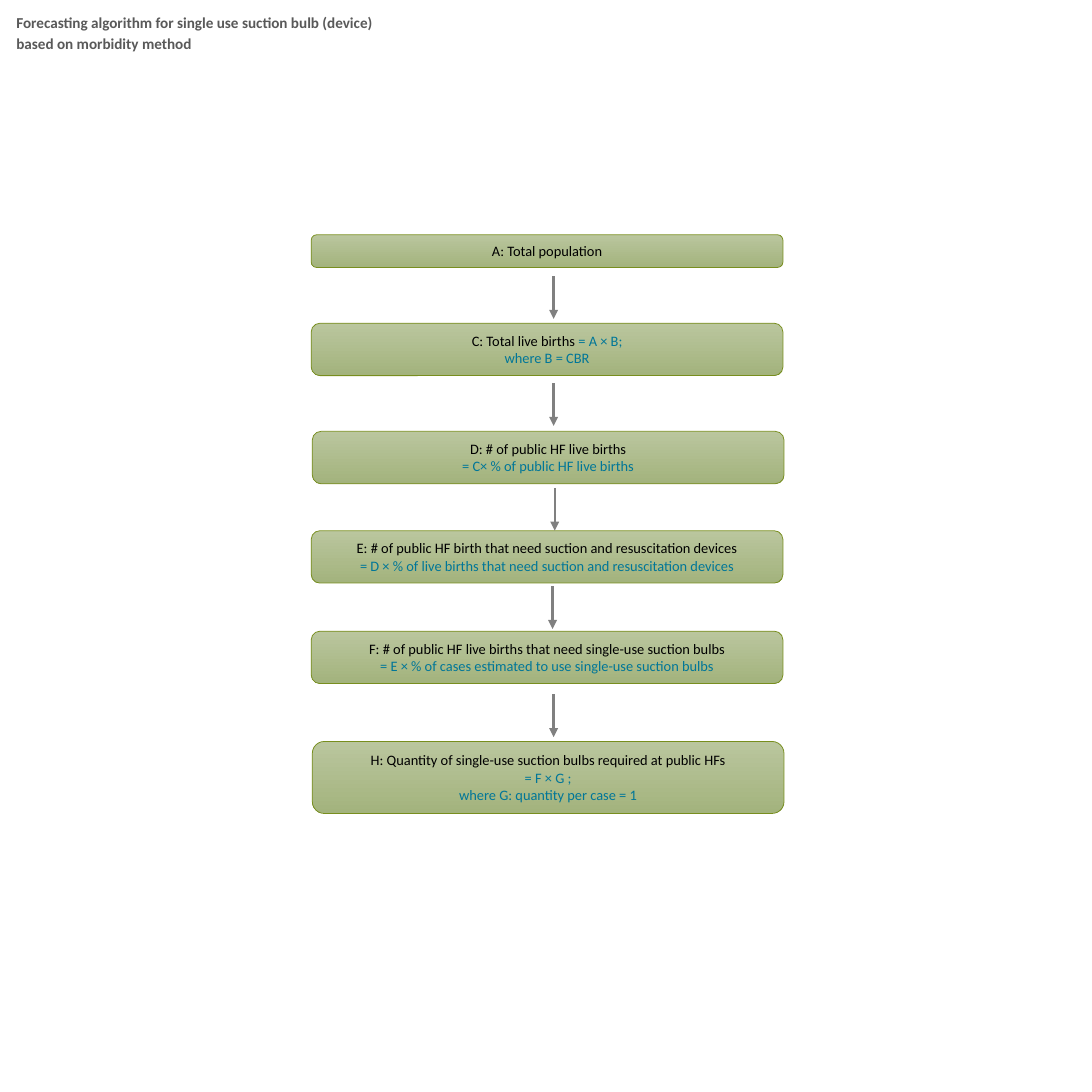
import pptx
import pptx.dml.color
import pptx.enum.shapes
import pptx.enum.text
import pptx.oxml
import pptx.oxml.ns
import pptx.util

Inches = pptx.util.Inches
Pt = pptx.util.Pt
RGBColor = pptx.dml.color.RGBColor
Align = pptx.enum.text.PP_ALIGN
Anchor = pptx.enum.text.MSO_ANCHOR

BLACK = RGBColor(0x00, 0x00, 0x00)
FORMULA_BLUE = RGBColor(0x00, 0x76, 0x98)
HEADING_GRAY = RGBColor(0x59, 0x59, 0x59)
ARROW_GRAY = RGBColor(0x80, 0x80, 0x80)
LIGHT_GREEN = RGBColor(0xBA, 0xC6, 0x9E)
DARK_GREEN = RGBColor(0xA3, 0xB3, 0x7D)
BORDER_GREEN = RGBColor(0x78, 0x8E, 0x1E)

HEADING = "Forecasting algorithm for single use suction bulb (device) based on morbidity method"
STEP_WIDTH = 4.32
ARROW_LENGTH = 0.39

STEPS = [
    (2.85, 2.15, 0.3, [[("A: Total population", BLACK)]]),
    (2.85, 2.96, 0.48, [
        [("C: Total live births ", BLACK), ("= A × B;", FORMULA_BLUE)],
        [("where B = CBR", FORMULA_BLUE)]]),
    (2.86, 3.95, 0.48, [
        [("D: # of public HF live births", BLACK)],
        [("= C× % of public HF live births", FORMULA_BLUE)]]),
    (2.85, 4.86, 0.48, [
        [("E: # of public HF birth that need suction and resuscitation devices", BLACK)],
        [("= D × % of live births that need suction and resuscitation devices", FORMULA_BLUE)]]),
    (2.85, 5.78, 0.48, [
        [("F: # of public HF live births that need single-use suction bulbs", BLACK)],
        [("= E × % of cases estimated to use single-use suction bulbs", FORMULA_BLUE)]]),
    (2.86, 6.79, 0.66, [
        [("H: Quantity of single-use suction bulbs required at public HFs", BLACK)],
        [("= F × G ;", FORMULA_BLUE)],
        [("where G: quantity per case = 1", FORMULA_BLUE)]]),
]
ARROWS = [(5.07, 2.53), (5.07, 3.51), (5.08, 4.47), (5.06, 5.37), (5.07, 6.36)]


def write(frame, lines, size, align, anchor, bold=False, spacing=None, inset=None):
    """Fill a text frame with lines made of (text, colour) runs."""
    frame.word_wrap = True
    frame.auto_size = pptx.enum.text.MSO_AUTO_SIZE.NONE
    frame.vertical_anchor = anchor
    if inset is not None:
        frame.margin_left = frame.margin_right = Inches(inset)
        frame.margin_top = frame.margin_bottom = Inches(inset)
    for number, line in enumerate(lines):
        paragraph = frame.add_paragraph() if number else frame.paragraphs[0]
        paragraph.alignment = align
        paragraph.space_before = Pt(0)
        if spacing:
            paragraph.line_spacing = spacing
        for text, color in line:
            run = paragraph.add_run()
            run.text = text
            run.font.name = "Calibri"
            run.font.size = Pt(size)
            run.font.bold = bold
            run.font.color.rgb = color


class FlowSlide:
    """Hold the flowchart style and the current slide."""

    def __init__(self, deck):
        """Add a title-only slide to the deck."""
        self.slide = deck.slides.add_slide(deck.slide_layouts[5])

    def heading(self, text):
        """Place the slide title at the top left."""
        title = self.slide.shapes.title
        title.left, title.top = Inches(0.05), Inches(0.05)
        title.width, title.height = Inches(3.49), Inches(0.47)
        write(title.text_frame, [[(text, HEADING_GRAY)]], size=10,
              align=Align.LEFT, anchor=Anchor.TOP, bold=True, spacing=1.15)

    def step(self, left, top, height, lines):
        """Draw one rounded green step."""
        step = self.slide.shapes.add_shape(
            pptx.enum.shapes.MSO_SHAPE.ROUNDED_RECTANGLE,
            Inches(left), Inches(top), Inches(STEP_WIDTH), Inches(height))
        step.shadow.inherit = False
        step.fill.gradient()
        step.fill.gradient_angle = 270
        for stop, color, position in zip(
                step.fill.gradient_stops, (LIGHT_GREEN, DARK_GREEN), (0, 1)):
            stop.color.rgb = color
            stop.position = position
        step.line.color.rgb = BORDER_GREEN
        step.line.width = Pt(0.5)
        write(step.text_frame, lines, size=9.5, align=Align.CENTER,
              anchor=Anchor.MIDDLE, inset=0.05)

    def arrow(self, x, top):
        """Draw one downward arrow."""
        arrow = self.slide.shapes.add_connector(
            pptx.enum.shapes.MSO_CONNECTOR.STRAIGHT,
            Inches(x), Inches(top), Inches(x), Inches(top + ARROW_LENGTH))
        arrow.line.color.rgb = ARROW_GRAY
        arrow.line.width = Pt(1.5)
        namespace = pptx.oxml.ns.nsdecls("a")
        arrow.line._get_or_add_ln().append(
            pptx.oxml.parse_xml(f'<a:tailEnd {namespace} type="triangle"/>'))
        arrow._element.spPr.append(pptx.oxml.parse_xml(f"<a:effectLst {namespace}/>"))


def main():
    """Build and save the forecasting flowchart."""
    deck = pptx.Presentation()
    deck.slide_width = deck.slide_height = Inches(10)
    flow = FlowSlide(deck)
    flow.heading(HEADING)
    for left, top, height, lines in STEPS:
        flow.step(left, top, height, lines)
    for x, top in ARROWS:
        flow.arrow(x, top)
    deck.save("out.pptx")


if __name__ == "__main__":
    main()
